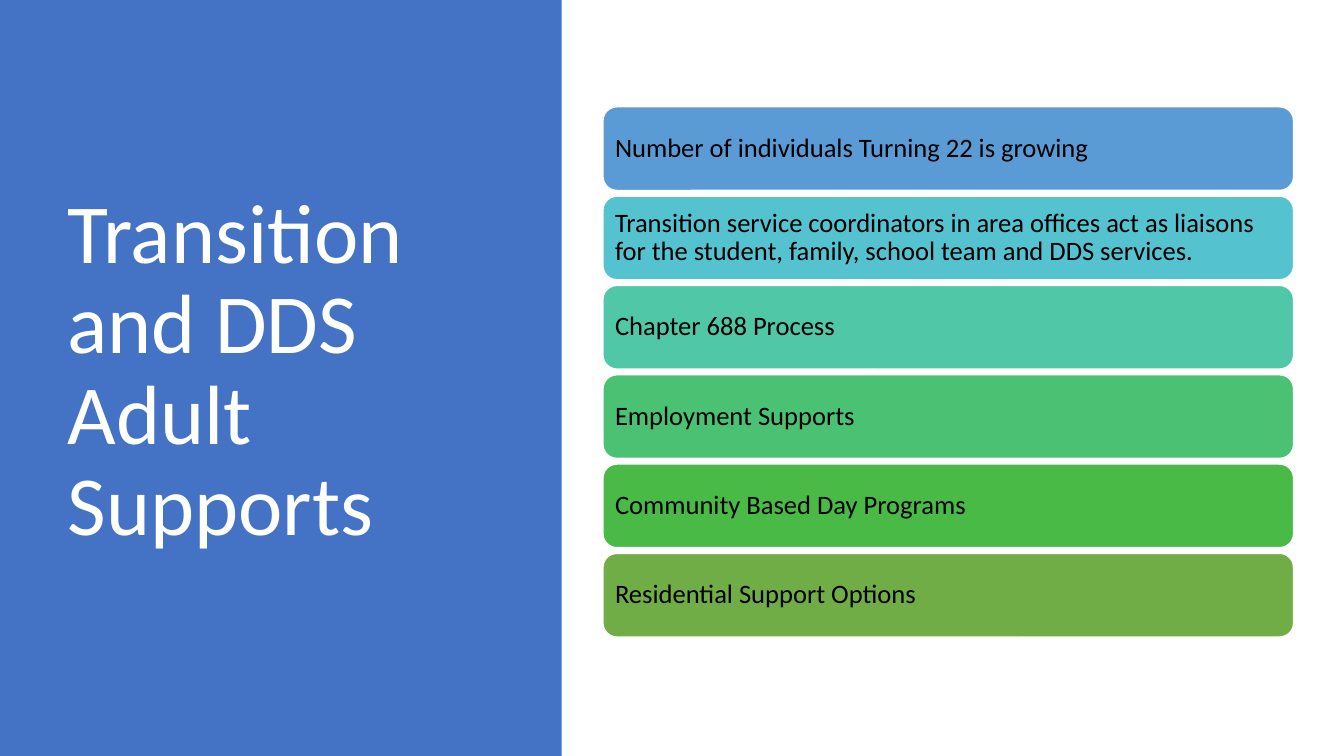
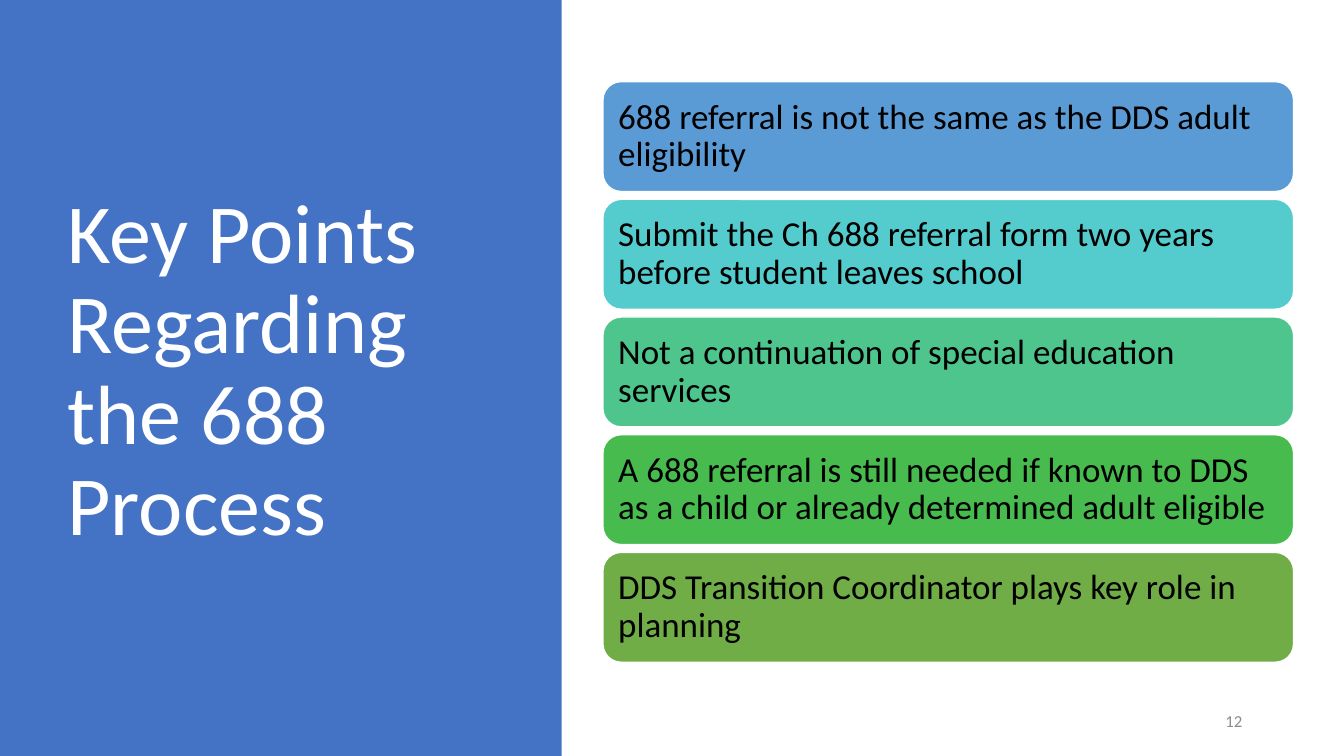
from pptx import Presentation
from pptx.dml.color import RGBColor
from pptx.enum.shapes import MSO_SHAPE as SHAPE
from pptx.enum.text import MSO_ANCHOR as ANCHOR, MSO_AUTO_SIZE as AUTO, PP_ALIGN as ALIGN
from pptx.util import Inches, Pt

# Shared style
FONT = "Calibri"
WHITE = RGBColor(0xFF, 0xFF, 0xFF)
BLACK = RGBColor(0x00, 0x00, 0x00)
GRAY = RGBColor(0x8C, 0x8C, 0x8C)
PANEL_BLUE = RGBColor(0x44, 0x72, 0xC4)
BLUE = RGBColor(0x5B, 0x9B, 0xD5)
OLIVE = RGBColor(0x70, 0xAD, 0x47)
TITLE_ONLY = 5
CARD_LEFT, CARD_WIDTH = 5.98, 6.85

# Slide content: (text, card colour)
SUPPORTS = [
    ("Number of individuals Turning 22 is growing", BLUE),
    ("Transition service coordinators in area offices act as liaisons "
     "for the student, family, school team and DDS services.",
     RGBColor(0x55, 0xC3, 0xCF)),
    ("Chapter 688 Process", RGBColor(0x50, 0xC8, 0xA7)),
    ("Employment Supports", RGBColor(0x4B, 0xC1, 0x74)),
    ("Community Based Day Programs", RGBColor(0x4A, 0xBA, 0x46)),
    ("Residential Support Options", OLIVE),
]
KEY_POINTS = [
    ("688 referral is not the same as the DDS adult eligibility", BLUE),
    ("Submit the Ch 688 referral form two years before student leaves school",
     RGBColor(0x54, 0xCC, 0xCD)),
    ("Not a continuation of special education services",
     RGBColor(0x4D, 0xC5, 0x8D)),
    ("A 688 referral is still needed if known to DDS as a child "
     "or already determined adult eligible", RGBColor(0x48, 0xBB, 0x4F)),
    ("DDS Transition Coordinator plays key role in planning", OLIVE),
]


def write(shape, text, size, color, align=ALIGN.LEFT, spacing=0.9):
    """Fill a shape with one vertically centred paragraph."""
    tf = shape.text_frame
    tf.word_wrap = True
    tf.auto_size = AUTO.NONE
    tf.vertical_anchor = ANCHOR.MIDDLE
    p = tf.paragraphs[0]
    p.alignment = align
    p.line_spacing = spacing
    r = p.add_run()
    r.text = text
    r.font.name = FONT
    r.font.size = Pt(size)
    r.font.color.rgb = color


def add_filled(s, kind, left, top, width, height, color):
    sp = s.shapes.add_shape(kind, Inches(left), Inches(top),
                            Inches(width), Inches(height))
    sp.shadow.inherit = False
    sp.fill.solid()
    sp.fill.fore_color.rgb = color
    sp.line.fill.background()
    return sp


def add_titled_slide(prs, text):
    """Add a slide with the title on a full-height panel at the left."""
    s = prs.slides.add_slide(prs.slide_layouts[TITLE_ONLY])
    title = s.shapes.title
    panel = add_filled(s, SHAPE.RECTANGLE, 0, 0, 5.57, 7.5, PANEL_BLUE)
    title.element.addprevious(panel.element)  # panel goes behind the title
    title.left, title.top = Inches(0.57), Inches(0.68)
    title.width, title.height = Inches(4.16), Inches(6.02)
    write(title, text, 60, WHITE)
    return s


def add_cards(s, cards, first_top, last_top, height, size, inset):
    """Stack cards evenly between the first and last top edges."""
    pitch = (last_top - first_top) / (len(cards) - 1)
    for i, (text, color) in enumerate(cards):
        card = add_filled(s, SHAPE.ROUNDED_RECTANGLE, CARD_LEFT,
                          first_top + i * pitch, CARD_WIDTH, height, color)
        card.line.color.rgb = WHITE
        card.line.width = Pt(1)
        tf = card.text_frame
        tf.margin_left = tf.margin_right = Inches(inset)
        tf.margin_top = tf.margin_bottom = Inches(inset)
        write(card, text, size, BLACK)


def add_page_number(s, number):
    box = s.shapes.add_textbox(Inches(9.42), Inches(6.95), Inches(3), Inches(0.4))
    write(box, str(number), 12, GRAY, ALIGN.RIGHT, spacing=1.0)
    box.text_frame.paragraphs[0].space_after = Pt(6)


def main():
    prs = Presentation()
    prs.slide_width, prs.slide_height = Inches(13.33), Inches(7.5)

    # Adult supports
    s = add_titled_slide(prs, "Transition and DDS Adult Supports")
    add_cards(s, SUPPORTS, 1.06, 5.49, height=0.83, size=19, inset=0.08)

    # Key points of the 688 process
    s = add_titled_slide(prs, "Key Points Regarding the 688 Process")
    add_page_number(s, 12)
    add_cards(s, KEY_POINTS, 0.81, 5.48, height=1.09, size=25, inset=0.1)

    prs.save("out.pptx")


if __name__ == "__main__":
    main()
